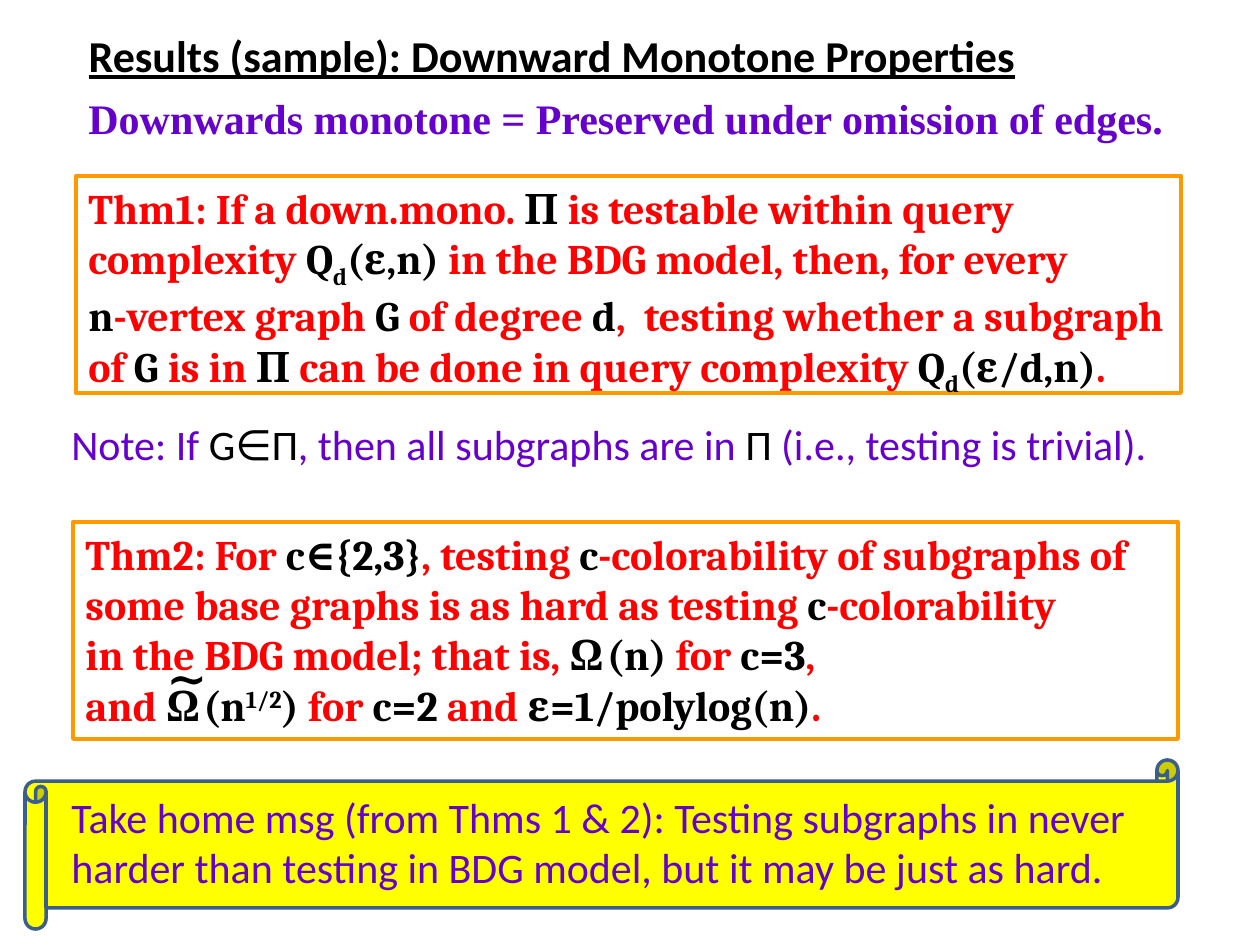
from pptx import Presentation
from pptx.dml.color import RGBColor
from pptx.enum.shapes import MSO_SHAPE
from pptx.enum.text import MSO_ANCHOR, MSO_AUTO_SIZE, PP_ALIGN
from pptx.util import Pt

RECT, SCROLL = MSO_SHAPE.RECTANGLE, MSO_SHAPE.HORIZONTAL_SCROLL
TOP, MIDDLE = MSO_ANCHOR.TOP, MSO_ANCHOR.MIDDLE
LEFT, FIXED = PP_ALIGN.LEFT, MSO_AUTO_SIZE.NONE
PX = 914400 / 126
BLACK, RED, PURPLE = "000000", "FF0000", "6600CC"
ORANGE, YELLOW, BLUE = "FF9900", "FFFF00", "3A5F8C"


def color(code):
    return RGBColor.from_string(code)


def write(shape, text, tint, font, shift=0, anchor=TOP):
    """Bars switch between tint and black, carets switch the shift on and off."""
    frame = shape.text_frame
    look = {"word_wrap": True, "auto_size": FIXED, "vertical_anchor": anchor}
    for name, value in look.items():
        setattr(frame, name, value)
    para = frame.paragraphs[0]
    para.alignment = LEFT
    for i, part in enumerate(text.split("|")):
        for j, piece in enumerate(part.split("^")):
            for k, line in enumerate(piece.split("\n")):
                if k:
                    para.add_line_break()
                if not line:
                    continue
                run = para.add_run()
                run.text = line
                for name, value in font.items():
                    setattr(run.font, name, value)
                run.font.color.rgb = color(BLACK if i % 2 else tint)
                if j % 2:
                    run.font._element.set("baseline", str(shift * 1000))


deck = Presentation()
deck.slide_width, deck.slide_height = int(1260 * PX), int(945 * PX)
slide = deck.slides.add_slide(deck.slide_layouts[5])
shapes = slide.shapes

plain = {"name": "Calibri", "size": Pt(24), "bold": False}
strong = {"name": "Cambria", "size": Pt(24), "bold": True}
roman = {"name": "Times New Roman", "size": Pt(24), "bold": True}
sign = {"name": "Cambria", "size": Pt(28), "bold": True}
head = {"name": "Calibri", "size": Pt(25.2), "bold": True, "underline": True}

# Title
title = shapes.title
spot = {"left": 76, "top": 24, "width": 1080, "height": 62}
for name, value in spot.items():
    setattr(title, name, int(value * PX))
write(title, "Results (sample): Downward Monotone Properties", BLACK, head,
      anchor=MIDDLE)

# Framed theorems and the scroll behind the closing message
thm1 = ("Thm1: If a down.mono. |Π| is testable within query complexity "
        "|Q^d^(ε,n)| in the BDG model, then, for every \n|n|-vertex graph |G"
        "| of degree |d|,  testing whether a subgraph of |G| is in |Π"
        "| can be done in query complexity |Q^d^(ε/d,n)|.")
thm2 = ("Thm2: For |c∈{2,3}|, testing |c|-colorability of subgraphs of some "
        "base graphs is as hard as testing |c|-colorability \n"
        "in the BDG model; that is, |Ω(n) |for |c=3|, \n"
        "and |Ω(n^1/2^) |for |c=2| and |ε=1/polylog(n)|.")
frames = [
    (RECT, (76, 176, 1105, 217), None, ORANGE, 2.25, thm1, -25),
    (RECT, (73, 522, 1105, 217), None, ORANGE, 2.25, thm2, 30),
    (SCROLL, (25, 760, 1153, 169), YELLOW, BLUE, 2, "", 0),
]
for kind, box, fill, edge, width, text, shift in frames:
    shape = shapes.add_shape(kind, *[int(v * PX) for v in box])
    shape.shadow.inherit = False
    if fill:
        shape.fill.solid()
        shape.fill.fore_color.rgb = color(fill)
    else:
        shape.fill.background()
    shape.line.color.rgb = color(edge)
    shape.line.width = Pt(width)
    if text:
        write(shape, text, RED, strong, shift)

# Free text: definition, note, tilde over the omega, closing message
notes = [
    ((76, 86, 1126, 63), PURPLE, roman,
     "Downwards monotone = Preserved under omission of edges."),
    ((59, 412, 1126, 63), PURPLE, plain,
     "Note: If |G∈Π|, then all subgraphs are in |Π"
     "| (i.e., testing is trivial)."),
    ((154, 641, 57, 72), BLACK, sign, "∼"),
    ((59, 785, 1126, 115), PURPLE, plain,
     "Take home msg (from Thms 1 & 2): Testing subgraphs in never harder "
     "than testing in BDG model, but it may be just as hard."),
]
for box, tint, font, text in notes:
    write(shapes.add_textbox(*[int(v * PX) for v in box]), text, tint, font)

deck.save("out.pptx")
